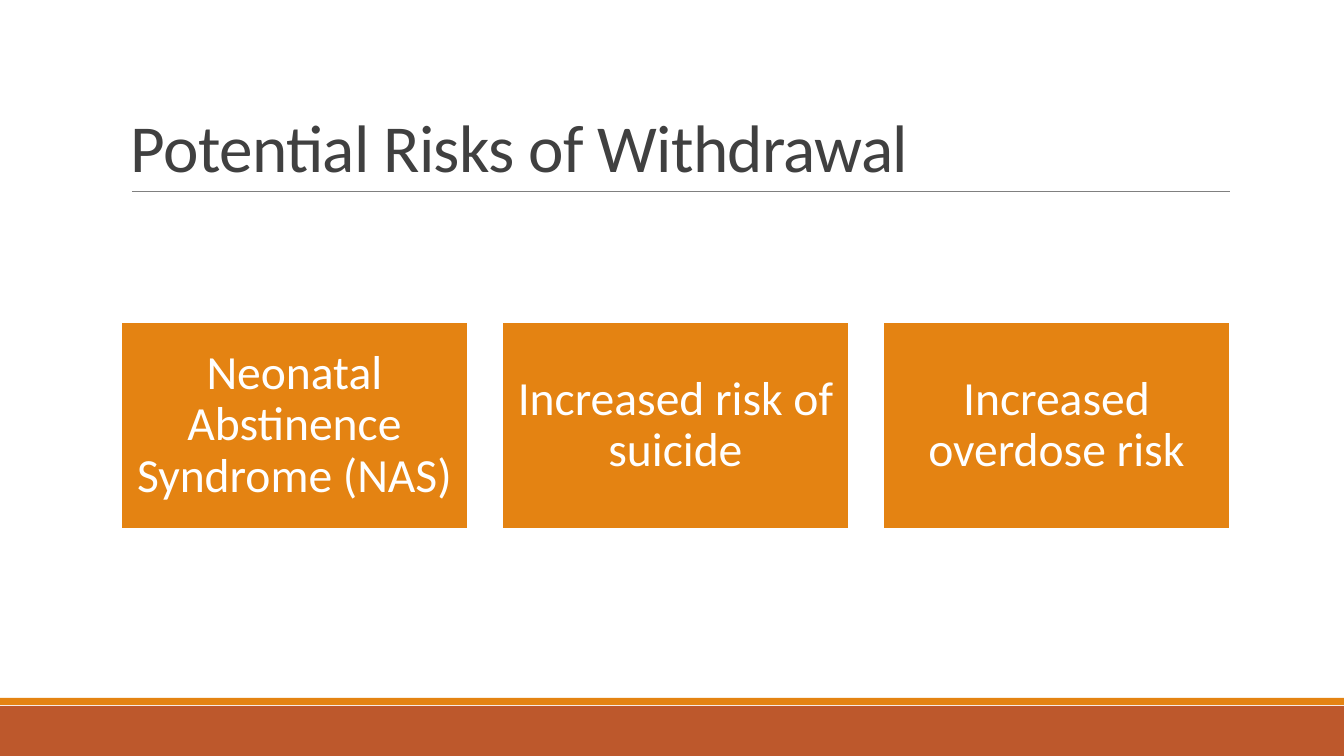
from lxml import etree
from pptx import Presentation
from pptx import util as u
from pptx.dml.color import RGBColor
from pptx.enum import shapes, text
from pptx.oxml.ns import qn

PX = 12192000 / 1344
COLORS = {
    "rust": "BD582C",
    "orange": "E48312",
    "rule": "808080",
    "heading": "404040",
    "white": "FFFFFF",
}
RISKS = [
    "Neonatal Abstinence Syndrome (NAS)",
    "Increased risk of suicide",
    "Increased overdose risk",
]


def px(*lengths):
    return [u.Emu(round(length * PX)) for length in lengths]


def color(name):
    return RGBColor.from_string(COLORS[name])


def write(frame, wording, *, size, ink, align, anchor, leading, insets, tracking=0):
    frame.word_wrap = True
    frame.auto_size = text.MSO_AUTO_SIZE.NONE
    frame.vertical_anchor = anchor
    (frame.margin_left, frame.margin_top,
     frame.margin_right, frame.margin_bottom) = px(*insets)
    paragraph = frame.paragraphs[0]
    paragraph.alignment = align
    paragraph.line_spacing = leading
    run = paragraph.add_run()
    run.text = wording
    run.font.name = "Calibri"
    run.font.size = u.Pt(size)
    run.font.color.rgb = color(ink)
    if tracking:
        run.font._element.set("spc", str(tracking))


def add_block(slide, left, top, width, height, fill, outline=None):
    block = slide.shapes.add_shape(
        shapes.MSO_SHAPE.RECTANGLE, *px(left, top, width, height))
    block.shadow.inherit = False
    block.fill.solid()
    block.fill.fore_color.rgb = color(fill)
    if outline:
        block.line.color.rgb = color(outline)
        block.line.width = u.Pt(1.25)
    else:
        block.line.fill.background()
    return block


def add_rule(slide, left, right, y):
    rule = slide.shapes.add_connector(
        shapes.MSO_CONNECTOR.STRAIGHT, *px(left, y, right, y))
    rule.line.color.rgb = color("rule")
    rule.line.width = u.Pt(0.5)
    etree.SubElement(rule._element.spPr, qn("a:effectLst"))


def add_heading(slide, wording):
    heading = slide.shapes.title
    heading.left, heading.top, heading.width, heading.height = px(121, 31, 1109, 160)
    write(heading.text_frame, wording, size=48, ink="heading",
          align=text.PP_ALIGN.LEFT, anchor=text.MSO_ANCHOR.BOTTOM,
          leading=0.85, insets=(10, 5, 10, 5), tracking=-50)


def add_risk(slide, left, wording):
    card = add_block(slide, left, 322, 347, 207, "orange", outline="white")
    write(card.text_frame, wording, size=34, ink="white",
          align=text.PP_ALIGN.CENTER, anchor=text.MSO_ANCHOR.MIDDLE,
          leading=0.9, insets=(14, 14, 14, 14))


def main():
    deck = Presentation()
    deck.slide_width, deck.slide_height = px(1344, 756)
    slide = deck.slides.add_slide(deck.slide_layouts[5])
    add_block(slide, 0, 706, 1344, 50, "rust")
    add_block(slide, 0, 698, 1344, 7, "orange")
    add_rule(slide, 132, 1230, 191)
    add_heading(slide, "Potential Risks of Withdrawal")
    for column, risk in enumerate(RISKS):
        add_risk(slide, 121 + 381 * column, risk)
    deck.save("out.pptx")


if __name__ == "__main__":
    main()
